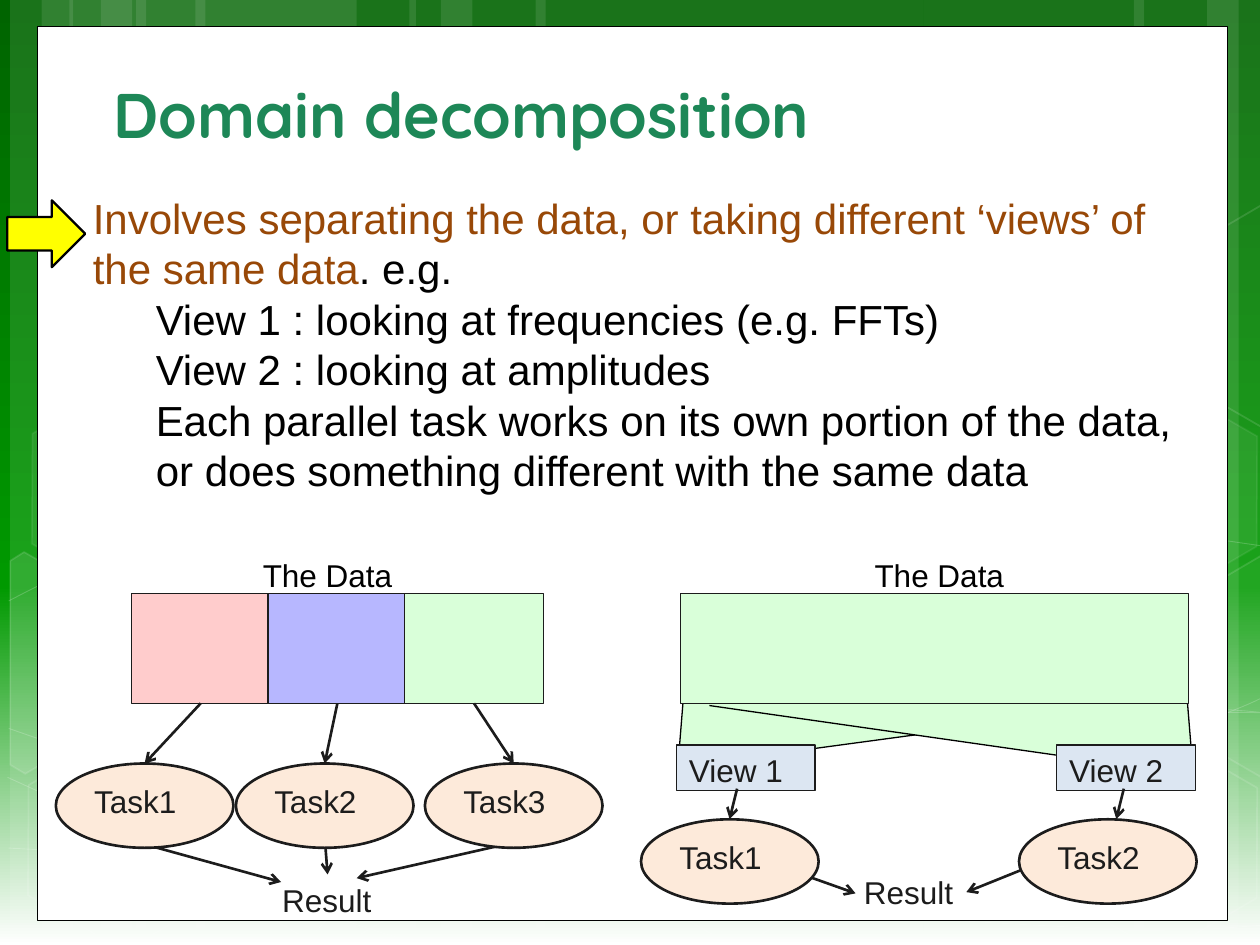
"""Build the domain decomposition slide."""
from copy import deepcopy
from dataclasses import dataclass
from math import cos, radians, sin
from typing import Optional

from lxml.etree import SubElement
from pptx import Presentation
from pptx.dml.color import RGBColor
from pptx.enum.shapes import MSO_CONNECTOR, MSO_SHAPE
from pptx.enum.text import MSO_ANCHOR, MSO_AUTO_SIZE, PP_ALIGN
from pptx.oxml.ns import qn
from pptx.shapes.autoshape import Shape
from pptx.shapes.connector import Connector
from pptx.slide import Slide
from pptx.text.text import _Paragraph as Paragraph
from pptx.util import Pt

WHITE = RGBColor(0xFF, 0xFF, 0xFF)
BLACK = RGBColor(0x00, 0x00, 0x00)
INK = RGBColor(0x1C, 0x1C, 0x1C)
DARK_GREEN = RGBColor(0x00, 0x64, 0x00)
GREEN = RGBColor(0x00, 0x99, 0x00)
TITLE_GREEN = RGBColor(0x1D, 0x87, 0x57)
BROWN = RGBColor(0x98, 0x48, 0x07)
PINK = RGBColor(0xFF, 0xCC, 0xCC)
LILAC = RGBColor(0xB7, 0xB7, 0xFF)
MINT = RGBColor(0xD9, 0xFF, 0xD9)
SKY = RGBColor(0xDC, 0xE6, 0xF2)
PEACH = RGBColor(0xFD, 0xEA, 0xDA)
YELLOW = RGBColor(0xFF, 0xFF, 0x00)
TILT = 30

Point = tuple[float, float]


@dataclass(frozen=True)
class Style:
    fill: Optional[RGBColor] = None
    line: Optional[RGBColor] = None
    weight: float = 0.75
    fill_opacity: int = 100
    line_opacity: int = 100


@dataclass(frozen=True)
class Frame:
    left: float
    top: float
    width: float
    height: float

    def lengths(self) -> list[Pt]:
        return [Pt(value) for value in (self.left, self.top, self.width, self.height)]


@dataclass(frozen=True)
class Hexagon:
    left: float
    top: float
    fill_opacity: int
    line_opacity: int


HEXAGONS = [
    Hexagon(240.5, 25.9, 4, 8), Hexagon(357.8, 424.1, 6, 12), Hexagon(7.9, 425.5, 0, 12),
    Hexagon(10.1, 224.6, 7, 8), Hexagon(125.3, 426.2, 0, 12), Hexagon(600.5, 427, 0, 12),
    Hexagon(600.5, 226.1, 7, 8),
]
LEFT_EDGE = [(5.8, 320.4), (13.7, 315.4), (69.1, 347), (68.4, 410.4), (14.4, 442.1), (5.8, 437)]
RIGHT_EDGE = [(666.7, 349.2), (720.7, 317.5), (726.5, 321.1), (726.5, 441.4), (721.4, 444.2),
              (666.7, 412.6)]
CURVES = [
    [(5, 484.6), (43.9, 486.7), (82.8, 488.9), (136.8, 488.2), (190.8, 487.4), (257.8, 486),
     (329.8, 478.8), (401.8, 471.6), (504, 457.9), (570.2, 444.2), (635.8, 430.6),
     (703.4, 409), (725, 396.7)],
    [(5, 343.4), (25.9, 332.6), (46.8, 321.1), (87.1, 310.3), (128.2, 299.5), (186.5, 283.7),
     (249.8, 278.6), (313.9, 273.6), (391.7, 272.9), (470.9, 278.6), (550.1, 284.4),
     (681.8, 306.7), (725, 312.5)],
    [(4.3, 444.2), (91.4, 483.8), (177.8, 523.4), (240.5, 539.3)],
    [(5, 416.2), (27.4, 424.1), (50.4, 432), (92.2, 443.5), (133.9, 454.3), (196.6, 472.3),
     (257, 484.6), (316.8, 496.8), (392.4, 509.8), (452.2, 517), (511.9, 524.9), (576, 527.8),
     (614.2, 529.9), (651.6, 532.8), (661.7, 531.4), (680.4, 531.4), (699.1, 530.6),
     (712.1, 529.2), (725, 528.5)],
    [(174.2, 539.3), (187.2, 524.9), (200.2, 510.5), (217.4, 497.5), (234.7, 484.6),
     (259.2, 470.2), (279.4, 460.1), (299.5, 450), (311.8, 445.7), (338.4, 438.5),
     (364.3, 431.3), (412.6, 421.2), (437.8, 416.2), (463.7, 411.1), (467.3, 411.1),
     (489.6, 409.7), (511.9, 407.5), (547.2, 405.4), (571.7, 404.6), (596.9, 403.9),
     (637.9, 404.6), (637.9, 404.6), (686.2, 404.6), (686.2, 404.6), (699.1, 405.4),
     (711.4, 406.1), (717.8, 406.8), (724.3, 407.5), (722.2, 406.8), (724.3, 407.5)],
]
BODY_LINES = [
    "View 1 : looking at frequencies (e.g. FFTs)",
    "View 2 : looking at amplitudes",
    "Each parallel task works on its own portion of the data, "
    "or does something different with the same data",
]


def paint(shape: Shape, style: Style) -> None:
    shape.shadow.inherit = False
    properties = shape.element.spPr
    for area, color, opacity in ((shape.fill, style.fill, style.fill_opacity),
                                 (shape.line.fill, style.line, style.line_opacity)):
        if color is None or opacity == 0:
            area.background()
            continue
        area.solid()
        area.fore_color.rgb = color
        if opacity < 100:
            parent = properties if area is shape.fill else properties.find(qn("a:ln"))
            tone = parent.find(f"{qn('a:solidFill')}/{qn('a:srgbClr')}")
            SubElement(tone, qn("a:alpha"), val=str(opacity * 1000))
    if style.line is not None:
        shape.line.width = Pt(style.weight)


def set_font(para: Paragraph, size: float, color: RGBColor, name: str = "Arial") -> None:
    para.font.name, para.font.size, para.font.color.rgb = name, Pt(size), color


def add_box(page: Slide, kind: MSO_SHAPE, frame: Frame, style: Style, text: str = "") -> Shape:
    box = page.shapes.add_shape(kind, *frame.lengths())
    paint(box, style)
    if text:
        box.text_frame.vertical_anchor = MSO_ANCHOR.TOP
        para = box.text_frame.paragraphs[0]
        para.text, para.alignment = text, PP_ALIGN.LEFT
        set_font(para, 18, INK)
    return box


def add_outline(page: Slide, points: list[Point], style: Style, close: bool = False) -> Shape:
    corners = [(Pt(x), Pt(y)) for x, y in points]
    builder = page.shapes.build_freeform(*corners[0])
    builder.add_line_segments(corners[1:], close=close)
    outline = builder.convert_to_shape()
    paint(outline, style)
    return outline


def add_curve(page: Slide, knots: list[Point], style: Style) -> None:
    curve = add_outline(page, knots, style)
    route = next(curve.element.iter(qn("a:path")))
    segments = route.findall(qn("a:lnTo"))
    for index in range(0, len(segments), 3):
        bend = SubElement(route, qn("a:cubicBezTo"))
        for segment in segments[index:index + 3]:
            bend.append(segment[0])
            route.remove(segment)


def turn_back(points: list[Point], center: Point) -> list[Point]:
    cosine, sine = cos(radians(TILT)), sin(radians(TILT))
    offsets = [(x - center[0], y - center[1]) for x, y in points]
    return [(center[0] + x * cosine + y * sine, center[1] - x * sine + y * cosine)
            for x, y in offsets]


def add_arrow(page: Slide, start: Point, end: Point) -> Connector:
    arrow = page.shapes.add_connector(MSO_CONNECTOR.STRAIGHT, *map(Pt, (*start, *end)))
    arrow.line.color.rgb, arrow.line.width = INK, Pt(1.5)
    properties = arrow.element.spPr
    SubElement(properties.find(qn("a:ln")), qn("a:tailEnd"), type="arrow")
    SubElement(properties, qn("a:effectLst"))
    return arrow


def add_label(page: Slide, text: str, frame: Frame, color: RGBColor) -> None:
    box = page.shapes.add_textbox(*frame.lengths())
    box.text_frame.word_wrap = False
    para = box.text_frame.paragraphs[0]
    para.text = text
    set_font(para, 18, color)


def draw_background(page: Slide) -> Shape:
    fill = page.background.fill
    fill.gradient()
    fill.gradient_angle = 270
    first = page.element.find(f".//{qn('a:gsLst')}")[0]
    first.addnext(deepcopy(first))
    for stop, color, position in zip(fill.gradient_stops, (DARK_GREEN, GREEN, WHITE), (0, 0.62, 1)):
        stop.color.rgb, stop.position = color, position

    for origin, wide, mirrored in ((5.8, 126, False), (39.6, 126, False),
                                   (725.8, 126, True), (234, 221.8, False)):
        for offset, width in ((72, wide), (0, 36), (18, 59.8)):
            left = origin - offset - width if mirrored else origin + offset
            add_box(page, MSO_SHAPE.RECTANGLE, Frame(left, 0, width, 540),
                    Style(WHITE, fill_opacity=10))
    for knots in CURVES:
        add_curve(page, knots, Style(None, WHITE, 0.5, line_opacity=20))
    for item in HEXAGONS:
        hexagon = add_box(page, MSO_SHAPE.HEXAGON, Frame(item.left, item.top, 126, 109.4),
                          Style(WHITE, WHITE, 1, item.fill_opacity, item.line_opacity))
        hexagon.adjustments[0] = 0.285
        hexagon.rotation = TILT
    upper_edge = [(x, y - 200.2) for x, y in RIGHT_EDGE]
    for points, center, opacity in ((LEFT_EDGE, (25.9, 385.2), 10), (RIGHT_EDGE, (709.2, 374.4), 4),
                                    (upper_edge, (709.2, 174.2), 0)):
        edge = add_outline(page, turn_back(points, center), Style(WHITE, WHITE, 1, opacity, 12), True)
        edge.rotation = TILT
    return add_box(page, MSO_SHAPE.RECTANGLE, Frame(21.6, 15.1, 679.7, 510.8),
                   Style(WHITE, BLACK, 0.5))


def write_text(page: Slide, panel: Shape) -> None:
    title, body = page.shapes.title, page.placeholders[1]
    for holder, frame in ((body, Frame(45.8, 106.4, 647.3, 181.4)),
                          (title, Frame(57.4, 35.3, 606.2, 54.7))):
        panel.element.addnext(holder.element)
        holder.left, holder.top, holder.width, holder.height = frame.lengths()
        holder.text_frame.auto_size = MSO_AUTO_SIZE.NONE
    title.text_frame.text = "Domain decomposition"
    title.text_frame.vertical_anchor = MSO_ANCHOR.BOTTOM
    heading = title.text_frame.paragraphs[0]
    heading.alignment, heading.font.bold = PP_ALIGN.LEFT, True
    set_font(heading, 36, TITLE_GREEN, "Quicksand")

    body.text_frame.text = "\n".join(["", *BODY_LINES])
    for index, para in enumerate(body.text_frame.paragraphs):
        para.level = min(index, 1)
        para.line_spacing, para.space_before = Pt(28.8), Pt(0)
        properties = para._p.get_or_add_pPr()
        properties.set("marL", str(Pt(36 * para.level)))
        properties.set("indent", "0")
        SubElement(properties, qn("a:buNone"))
        set_font(para, 24, BLACK)
    lead = body.text_frame.paragraphs[0]
    span = lead.add_run()
    span.text = "Involves separating the data, or taking different ‘views’ of the same data"
    span.font.color.rgb = BROWN
    lead.add_run().text = ". e.g."


def add_task(page: Slide, name: str, left: float, top: float) -> Shape:
    return add_box(page, MSO_SHAPE.OVAL, Frame(left, top, 101.5, 48.2), Style(PEACH, INK, 1.5), name)


def draw_split_data(page: Slide) -> None:
    add_label(page, "The Data", Frame(143.1, 314.2, 89.3, 28.8), BLACK)
    add_label(page, "Result", Frame(154.1, 499.7, 66.2, 28.8), INK)
    for start, end in (((79.9, 481.7), (160.6, 504)), ((185.8, 481.7), (187.2, 499.7)),
                       ((292.3, 481.7), (203.8, 501.8))):
        add_arrow(page, start, end)
    for index, (color, left) in enumerate(((PINK, 31.9), (LILAC, 134.8), (MINT, 242.8))):
        cell = add_box(page, MSO_SHAPE.RECTANGLE, Frame(75.1 + 78.1 * index, 339.3, 79.2, 62.6),
                       Style(color, INK))
        task = add_task(page, f"Task{index + 1}", left, 436.3)
        arrow = add_arrow(page, (0, 0), (0, 0))
        arrow.begin_connect(cell, 2)
        arrow.end_connect(task, 0)


def draw_shared_data(page: Slide) -> None:
    add_label(page, "The Data", Frame(492.7, 314.2, 89.3, 28.8), BLACK)
    add_label(page, "Result", Frame(486.5, 495.4, 66.2, 28.8), INK)
    for points in ([(391, 393.1), (388.1, 429.1), (465.8, 427.7), (679, 398.9)],
                   [(678.2, 396.7), (681.1, 432.7), (607, 432), (405.4, 403.2)]):
        add_outline(page, points, Style(MINT, BLACK))
    add_arrow(page, (432, 490.3), (488.9, 510.5))
    add_arrow(page, (596.9, 491.8), (552.2, 509.8))
    for number, view_left, task_left, start in ((1, 386.6, 366.3, 421.2), (2, 603.9, 582.3, 642.2)):
        add_box(page, MSO_SHAPE.RECTANGLE, Frame(view_left, 425.7, 79.2, 25.9),
                Style(SKY, INK), f"View {number}")
        add_task(page, f"Task{number}", task_left, 468.2)
        add_arrow(page, (start, 450.7), (start - 4.3, 468))
    add_box(page, MSO_SHAPE.RECTANGLE, Frame(388.8, 339.3, 290.2, 62.6), Style(MINT, INK))


def main() -> None:
    deck = Presentation()
    deck.slide_width, deck.slide_height = Pt(720), Pt(540)
    page = deck.slides.add_slide(deck.slide_layouts[1])
    write_text(page, draw_background(page))
    draw_split_data(page)
    draw_shared_data(page)
    add_box(page, MSO_SHAPE.RIGHT_ARROW, Frame(4.1, 114.5, 44.6, 38.2), Style(YELLOW, BLACK, 1.25))
    deck.save("out.pptx")


if __name__ == "__main__":
    main()
